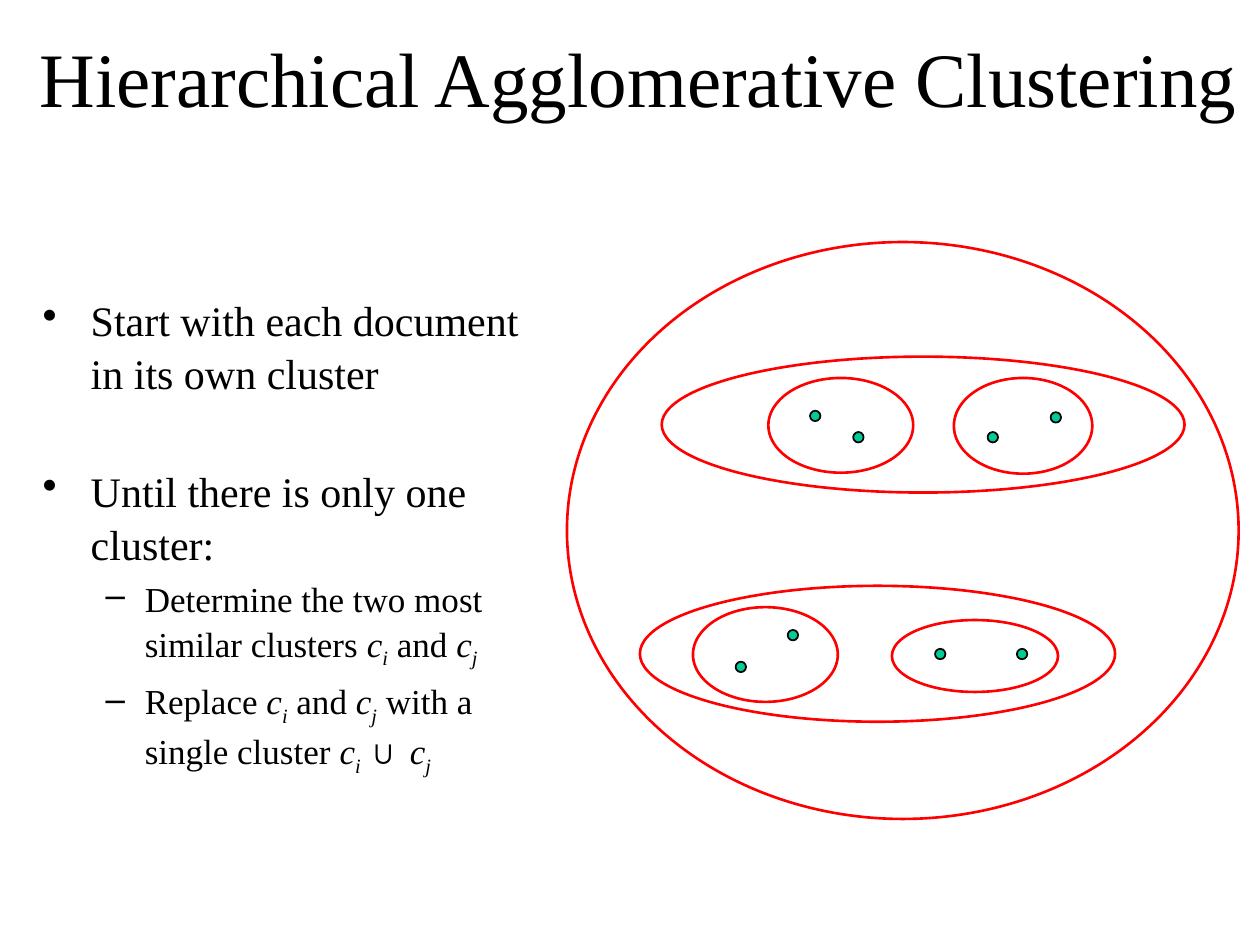
"""Build the Hierarchical Agglomerative Clustering slide."""
from lxml.etree import SubElement
from pptx import Presentation
from pptx.dml.color import RGBColor as RGB
from pptx.enum.shapes import MSO_SHAPE as Shape
from pptx.enum.text import MSO_ANCHOR as Anchor, MSO_AUTO_SIZE as AutoSize, PP_ALIGN as Align
from pptx.oxml.ns import qn
from pptx.util import Cm, Pt

COLORS = {"text": "000000", "dot": "00CC99", "outline": "000000", "ring": "FF0000"}
FONT = "Times New Roman"
DOT_SIZE = 0.21
DOTS = [(16.33, 8.28), (17.2, 8.71), (14.83, 13.34), (15.88, 12.7),
        (19.91, 8.71), (21.18, 8.31), (18.85, 13.08), (20.5, 13.08)]
RINGS = [(15.49, 7.62, 2.92, 1.91), (17.98, 12.5, 3.35, 1.45),
         (19.23, 7.62, 2.79, 1.93), (13.97, 12.24, 2.92, 1.91),
         (13.34, 7.19, 10.54, 2.74), (12.9, 11.81, 9.58, 2.74),
         (11.43, 4.88, 13.54, 11.63)]
LEVELS = [{"size": 24, "bullet": "•", "margin": 0.97, "hang": 0.97},
          {"size": 20, "bullet": "–", "margin": 2.06, "hang": 0.79}]
C_I = [("c", "var"), ("i", "sub")]
C_J = [("c", "var"), ("j", "sub")]
AND = [(" and ", "plain")]
STEPS = [
    (0, 0, [("Start with each document in its own cluster", "plain")]),
    (0, 37, [("Until there is only one cluster:", "plain")]),
    (1, 4, [("Determine the two most similar clusters ", "plain"), *C_I, *AND, *C_J]),
    (1, 4, [("Replace ", "plain"), *C_I, *AND, *C_J, (" with a single cluster ", "plain"),
            ("c", "var"), ("i ", "sub"), ("∪ ", "plain"), *C_J]),
]


class SlideBuilder:
    """Hold the style and the current slide."""

    def __init__(self, prs):
        self.slide = prs.slides.add_slide(prs.slide_layouts[5])

    def run(self, p, text, size, kind="plain"):
        r = p.add_run()
        r.text = text
        values = {"name": FONT, "size": Pt(size), "italic": kind != "plain"}
        for name, value in values.items():
            setattr(r.font, name, value)
        r.font.color.rgb = RGB.from_string(COLORS["text"])
        if kind == "sub":
            r.font._element.set("baseline", "-25000")

    def title(self, text, box, size):
        sp = self.slide.shapes.title
        for name, value in zip(("left", "top", "width", "height"), box):
            setattr(sp, name, Cm(value))
        tf = sp.text_frame
        values = {"word_wrap": True, "auto_size": AutoSize.NONE, "vertical_anchor": Anchor.MIDDLE}
        for name, value in values.items():
            setattr(tf, name, value)
        p = tf.paragraphs[0]
        p.alignment = Align.CENTER
        self.run(p, text, size)

    def ellipse(self, box, line, width, fill=None):
        sp = self.slide.shapes.add_shape(Shape.OVAL, *map(Cm, box))
        sp.shadow.inherit = False
        if fill:
            sp.fill.solid()
            sp.fill.fore_color.rgb = RGB.from_string(COLORS[fill])
        else:
            sp.fill.background()
        sp.line.color.rgb = RGB.from_string(COLORS[line])
        sp.line.width = Pt(width)

    def bullets(self, box, steps):
        tf = self.slide.shapes.add_textbox(*map(Cm, box)).text_frame
        tf.word_wrap = True
        for i, (level, before, parts) in enumerate(steps):
            p = tf.paragraphs[0] if i == 0 else tf.add_paragraph()
            style = LEVELS[level]
            values = {"level": level, "space_before": Pt(before), "line_spacing": 1.05}
            for name, value in values.items():
                setattr(p, name, value)
            pPr = p._p.get_or_add_pPr()
            pPr.set("marL", str(Cm(style["margin"])))
            pPr.set("indent", str(-Cm(style["hang"])))
            SubElement(pPr, qn("a:buChar")).set("char", style["bullet"])
            for text, kind in parts:
                self.run(p, text, style["size"], kind)


def main():
    prs = Presentation()
    prs.slide_width, prs.slide_height = Cm(25.4), Cm(19.05)
    s = SlideBuilder(prs)
    s.title("Hierarchical Agglomerative Clustering", (0.18, -0.05, 25.4, 3.18), 44)
    for x, y in DOTS:
        s.ellipse((x, y, DOT_SIZE, DOT_SIZE), "outline", 1, "dot")
    for box in RINGS:
        s.ellipse(box, "ring", 1.5)
    s.bullets((0.61, 5.77, 10.8, 11.43), STEPS)
    prs.save("out.pptx")


if __name__ == "__main__":
    main()
